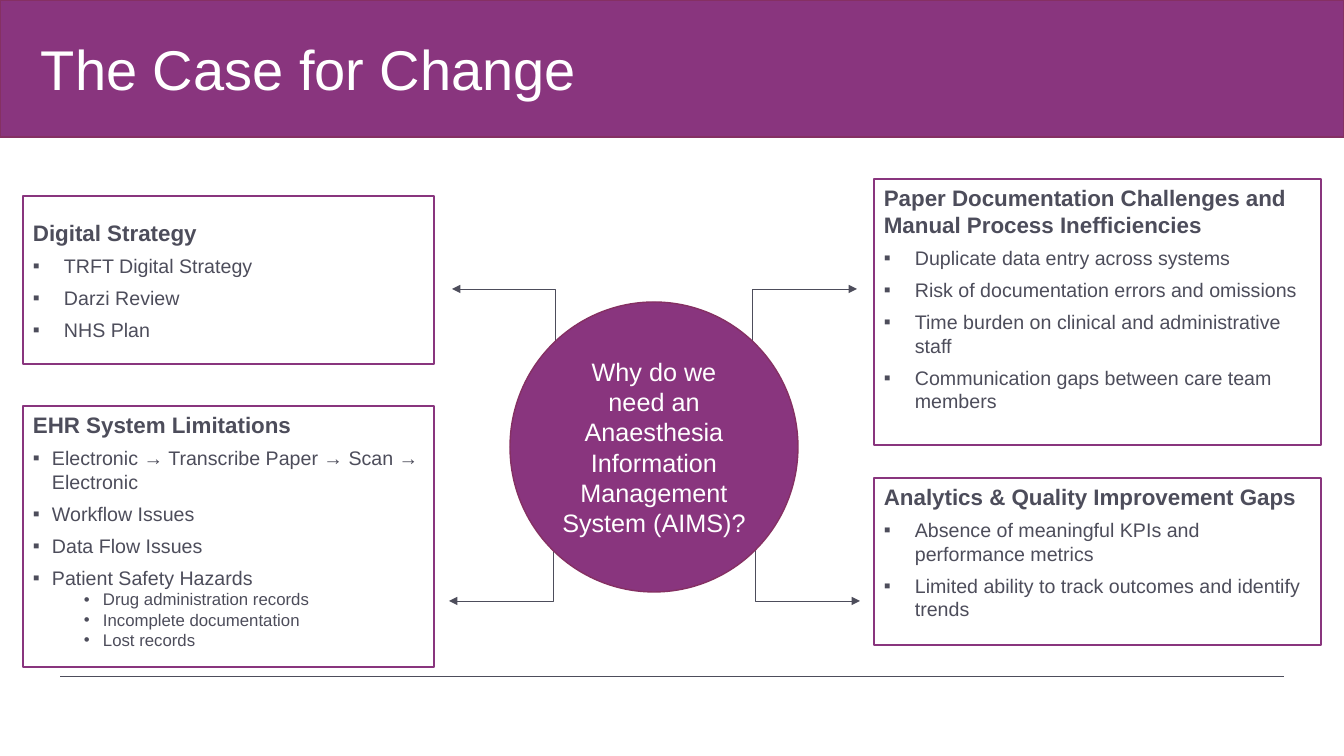
from pptx import Presentation
from pptx import util as u
from pptx.dml.color import RGBColor
from pptx.enum import shapes, text
from pptx.oxml.ns import qn
from lxml import etree

PX = 914400 / 100.8
PURPLE, EDGE, SLATE, WHITE = "89357E", "853063", "4D4D5B", "FFFFFF"


def px(n):
    return u.Emu(round(n * PX))


def rgb(color):
    return RGBColor.from_string(color)


prs = Presentation()
prs.slide_width, prs.slide_height = px(1344), px(756)
s = prs.slides.add_slide(prs.slide_layouts[6])

# Lines: footer rule, then arrows as (kind, start, end, width)
lines = [
    (shapes.MSO_CONNECTOR.STRAIGHT, (1284, 676), (60, 676), 0.25),
    (shapes.MSO_CONNECTOR.ELBOW, (449, 601), (553, 548), 0.5),
    (shapes.MSO_CONNECTOR.ELBOW, (452, 289), (555, 342), 0.5),
    (shapes.MSO_CONNECTOR.ELBOW, (857, 289), (752, 342), 0.5),
    (shapes.MSO_CONNECTOR.ELBOW, (860, 601), (755, 548), 0.5),
]
for kind, (x1, y1), (x2, y2), width in lines:
    c = s.shapes.add_connector(kind, px(x1), px(y1), px(x2), px(y2))
    c.line.color.rgb = rgb(SLATE)
    c.line.width = u.Pt(width)
    sp_pr = c._element.spPr
    if kind == shapes.MSO_CONNECTOR.ELBOW:
        sp_pr.find(qn("a:prstGeom")).set("prst", "bentConnector2")
        etree.SubElement(sp_pr.find(qn("a:ln")), qn("a:headEnd"), type="triangle")
    etree.SubElement(sp_pr, qn("a:effectLst"))

# Banner and central question
RECT, OVAL = shapes.MSO_SHAPE.RECTANGLE, shapes.MSO_SHAPE.OVAL
LEFT, CENTER = text.PP_ALIGN.LEFT, text.PP_ALIGN.CENTER
TOP, MIDDLE = text.MSO_ANCHOR.TOP, text.MSO_ANCHOR.MIDDLE
filled = [
    (RECT, (0, 0, 1344, 137), "The Case for Change", 40, LEFT, 41),
    (OVAL, (510, 302, 288, 290),
     "Why do we need an Anaesthesia Information Management System (AIMS)?",
     18, CENTER, 10),
]
for preset, place, words, size, align, inset in filled:
    sp = s.shapes.add_shape(preset, *map(px, place))
    sp.shadow.inherit = False
    sp.fill.solid()
    sp.fill.fore_color.rgb = rgb(PURPLE)
    sp.line.color.rgb = rgb(EDGE)
    sp.line.width = u.Pt(1)
    tf = sp.text_frame
    tf.word_wrap = True
    tf.vertical_anchor = MIDDLE
    tf.margin_left = px(inset)
    p = tf.paragraphs[0]
    p.alignment = align
    r = p.add_run()
    r.text = words
    r.font.name, r.font.size = "Arial", u.Pt(size)
    r.font.color.rgb = rgb(WHITE)

# Reason boxes: place, anchor, bullet indent, heading, bullets, sub-bullets
reasons = [
    ((23, 196, 411, 168), MIDDLE, 31, "Digital Strategy",
     ["TRFT Digital Strategy", "Darzi Review", "NHS Plan"], []),
    ((23, 406, 411, 261), TOP, 19, "EHR System Limitations",
     ["Electronic → Transcribe Paper → Scan → Electronic", "Workflow Issues",
      "Data Flow Issues", "Patient Safety Hazards"],
     ["Drug administration records", "Incomplete documentation", "Lost records"]),
    ((874, 179, 447, 266), TOP, 31,
     "Paper Documentation Challenges and Manual Process Inefficiencies",
     ["Duplicate data entry across systems",
      "Risk of documentation errors and omissions",
      "Time burden on clinical and administrative staff",
      "Communication gaps between care team members"], []),
    ((874, 478, 447, 167), TOP, 31, "Analytics & Quality Improvement Gaps",
     ["Absence of meaningful KPIs and performance metrics",
      "Limited ability to track outcomes and identify trends"], []),
]
for place, anchor, indent, heading, bullets, subs in reasons:
    sp = s.shapes.add_shape(RECT, *map(px, place))
    sp.shadow.inherit = False
    sp.fill.background()
    sp.line.color.rgb = rgb(PURPLE)
    sp.line.width = u.Pt(1.5)
    tf = sp.text_frame
    tf.word_wrap = True
    tf.vertical_anchor = anchor
    # words, size, bullet mark, left margin, level, space before
    rows = [(heading, 16, None, 0, 0, 0)]
    rows += [(b, 14, "▪", indent, 0, 6) for b in bullets]
    rows += [(b, 12, "•", 70, 1, 0) for b in subs]
    for i, (words, size, mark, margin, level, before) in enumerate(rows):
        p = tf.add_paragraph() if i else tf.paragraphs[0]
        p.alignment = LEFT
        p.level = level
        p.space_before = u.Pt(before)
        if mark:
            p_pr = p._p.get_or_add_pPr()
            p_pr.set("marL", str(px(margin)))
            p_pr.set("indent", str(-px(indent)))
            etree.SubElement(p_pr, qn("a:buFont"), typeface="Arial")
            etree.SubElement(p_pr, qn("a:buChar"), char=mark)
        r = p.add_run()
        r.text = words
        r.font.name, r.font.size = "Arial", u.Pt(size)
        r.font.bold = mark is None
        r.font.color.rgb = rgb(SLATE)

prs.save("out.pptx")
